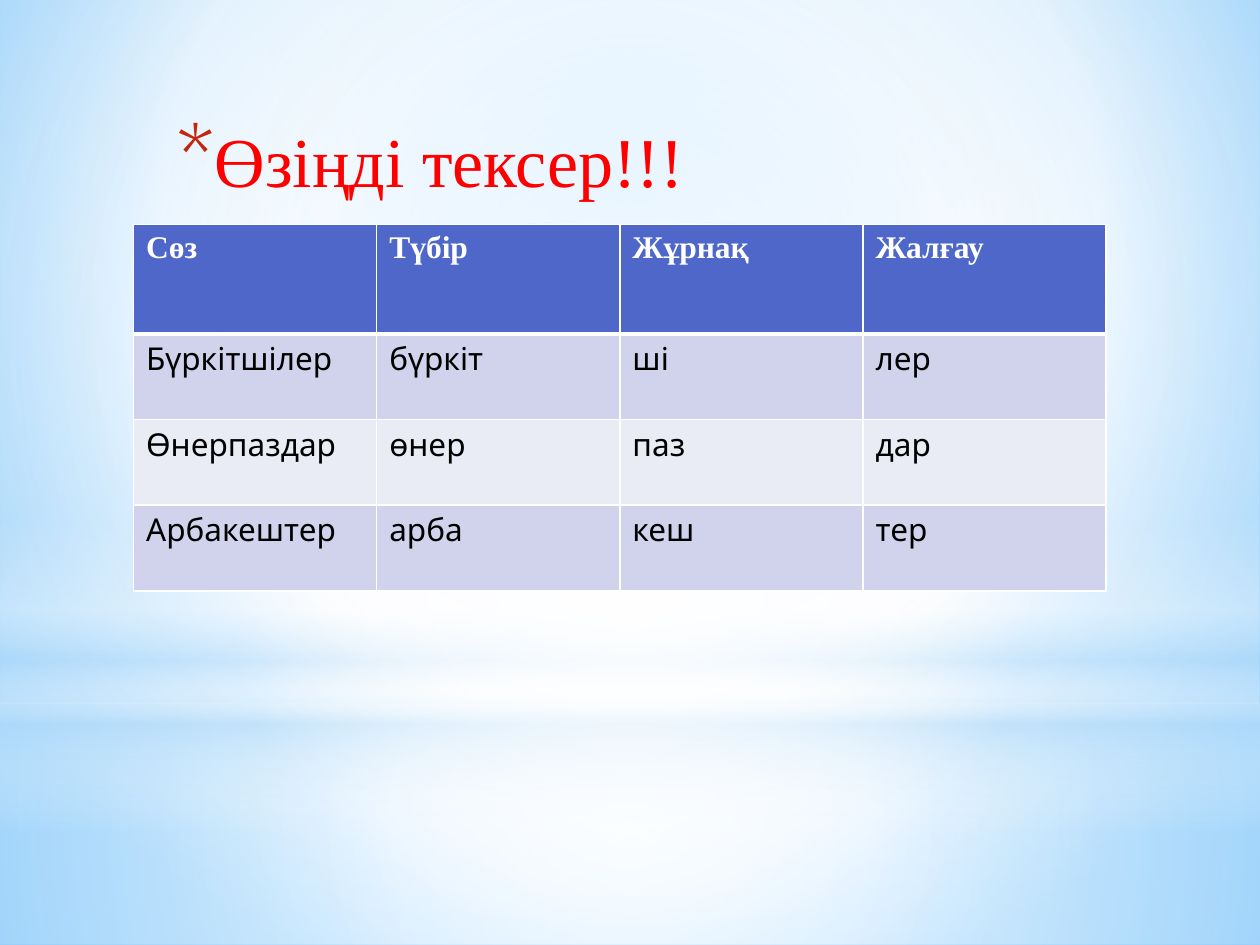
from lxml import etree
from pptx import Presentation, util as u
from pptx.dml.color import RGBColor
from pptx.enum import shapes
from pptx.oxml import parse_xml
from pptx.oxml.ns import nsdecls, qn

# Content
TITLE = "Өзіңді тексер!!!"
WORDS = [
    ("Сөз", "Түбір", "Жұрнақ", "Жалғау"),
    ("Бүркітшілер", "бүркіт", "ші", "лер"),
    ("Өнерпаздар", "өнер", "паз", "дар"),
    ("Арбакештер", "арба", "кеш", "тер"),
]

# Look: gradient stops are (position %, colour, opacity %)
WIDTH, HEIGHT = 10, 7.5
HORIZON = 5.58
CENTRE = (50, 50, 50, 50)
SKY = [(0, "9ED5FF", 100), (60, "FFFFFF", 100), (100, "5BB9FF", 100)]
RECT, OVAL = shapes.MSO_SHAPE.RECTANGLE, shapes.MSO_SHAPE.OVAL
LAYERS = [  # preset, top, height, stops, centre (None: top to bottom)
    (RECT, HORIZON, HEIGHT - HORIZON,
     [(0, "FFFFFF", 91), (37, "FFFFFF", 76), (100, "B4DCFA", 79)], CENTRE),
    (RECT, 0, HORIZON,
     [(0, "FFFFFF", 89), (48, "FFFFFF", 62), (100, "B4DCFA", 79)], CENTRE),
    (RECT, 4.12, 2.5,
     [(0, "FFFFFF", 0), (29, "FFFFFF", 30), (45, "B4DCFA", 40),
      (55, "FFFFFF", 26), (65, "B4DCFA", 60), (100, "FFFFFF", 0)], None),
    (OVAL, 1.75, HORIZON, [(0, "FFFFFF", 100), (56, "FFFFFF", 0)], CENTRE),
]
HEADER_FILL, BAND_FILLS = "4E67C8", ("E9EBF5", "D0D3EB")
COLUMN, HEADER_ROW, ROW = 1.93, 0.87, 0.68


def rgb(colour):
    return RGBColor.from_string(colour)


def gradient(stops, centre):
    marks = "".join(
        f'<a:gs pos="{pos * 1000}"><a:srgbClr val="{colour}">'
        f'<a:alpha val="{alpha * 1000}"/></a:srgbClr></a:gs>'
        for pos, colour, alpha in stops)
    if centre:
        sides = " ".join(f'{side}="{share * 1000}"' for side, share in zip("ltrb", centre))
        shade = f'<a:path path="circle"><a:fillToRect {sides}/></a:path>'
    else:
        shade = '<a:lin ang="5400000" scaled="0"/>'
    return parse_xml(f'<a:gradFill {nsdecls("a")} rotWithShape="1">'
                     f'<a:gsLst>{marks}</a:gsLst>{shade}</a:gradFill>')


def paint(fill, parent, stops, centre):
    fill.solid()
    parent.replace(parent.find(qn("a:solidFill")), gradient(stops, centre))


def add_borders(cell, widths):
    for place, (side, points) in enumerate(widths.items()):
        cell._tc.get_or_add_tcPr().insert(place, parse_xml(
            f'<a:ln{side} {nsdecls("a")} w="{u.Pt(points)}"><a:solidFill>'
            f'<a:srgbClr val="FFFFFF"/></a:solidFill></a:ln{side}>'))


def set_font(paragraph, name, size, colour, bold=False):
    font = paragraph.font
    font.name, font.size, font.bold = name, u.Pt(size), bold
    font.color.rgb = rgb(colour)


prs = Presentation()
prs.slide_width, prs.slide_height = u.Inches(WIDTH), u.Inches(HEIGHT)
slide = prs.slides.add_slide(prs.slide_layouts[6])

# Background and its light layers
sky = slide.background.fill
sky.solid()
paint(sky, slide.element.find(".//" + qn("p:bgPr")), SKY, (20, 10, 20, 60))
for preset, top, height, stops, centre in LAYERS:
    layer = slide.shapes.add_shape(
        preset, 0, u.Inches(top), u.Inches(WIDTH), u.Inches(height))
    layer.shadow.inherit = False
    layer.line.fill.background()
    paint(layer.fill, layer.element.spPr, stops, centre)

# Title with an asterisk bullet
heading = slide.shapes.add_textbox(*map(u.Inches, (1.25, 0.8, 7, 3.8))).text_frame
heading.word_wrap = True
heading.margin_top = u.Inches(0.13)
title = heading.paragraphs[0]
title.text = TITLE
title.space_after = u.Pt(3)
props = title._p.get_or_add_pPr()
props.set("marL", str(u.Inches(0.25)))
props.set("indent", str(u.Inches(-0.2)))
bullet_colour = etree.SubElement(props, qn("a:buClr"))
etree.SubElement(bullet_colour, qn("a:srgbClr"), val="C3260C")
etree.SubElement(props, qn("a:buSzPct"), val="130000")
etree.SubElement(props, qn("a:buFont"), typeface="Cabin")
etree.SubElement(props, qn("a:buChar"), char="*")
set_font(title, "Times New Roman", 40, "FF0000")

# Table of word parts
columns, body_rows = len(WORDS[0]), len(WORDS) - 1
table = slide.shapes.add_table(
    len(WORDS), columns, u.Inches(1.06), u.Inches(1.78),
    u.Inches(columns * COLUMN), u.Inches(HEADER_ROW + body_rows * ROW)).table
for column in table.columns:
    column.width = u.Inches(COLUMN)
for r, parts in enumerate(WORDS):
    header = r == 0
    table.rows[r].height = u.Inches(HEADER_ROW if header else ROW)
    for c, part in enumerate(parts):
        cell = table.cell(r, c)
        cell.text = part
        cell.fill.solid()
        cell.fill.fore_color.rgb = rgb(HEADER_FILL if header else BAND_FILLS[r % 2])
        add_borders(cell, {"L": 1, "R": 1, "T": 3 if r == 1 else 1, "B": 3 if header else 1})
        set_font(cell.text_frame.paragraphs[0],
                 "Times New Roman" if header else "Cabin", 18,
                 "FFFFFF" if header else "000000", header)

prs.save("out.pptx")
